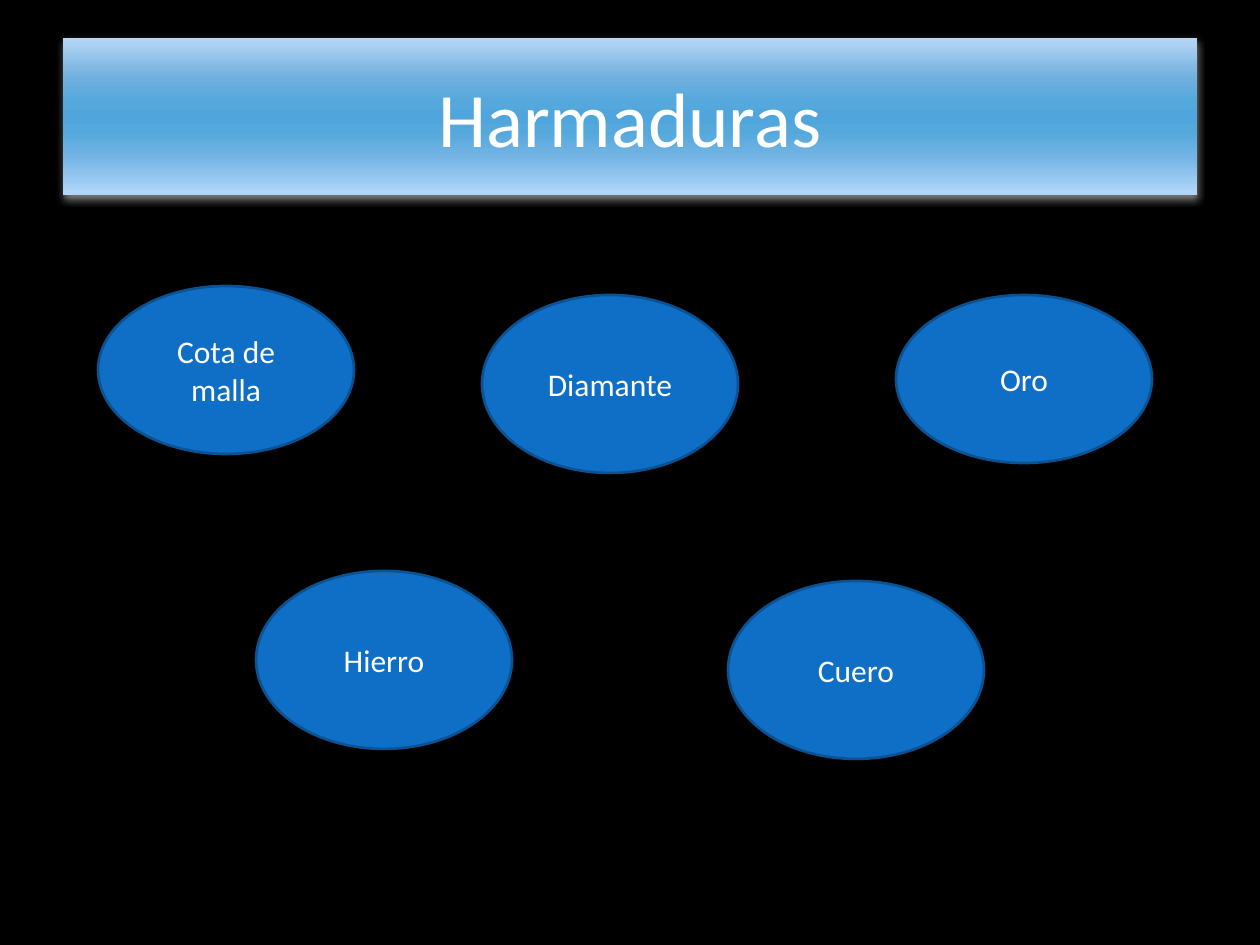
from lxml import etree
from pptx import Presentation
from pptx.dml.color import RGBColor
from pptx.enum.shapes import MSO_SHAPE
from pptx.enum.text import MSO_ANCHOR, PP_ALIGN
from pptx.oxml.ns import qn
from pptx.util import Pt

RECTANGLE = MSO_SHAPE.RECTANGLE
OVAL = MSO_SHAPE.OVAL
MIDDLE = MSO_ANCHOR.MIDDLE
CENTER = PP_ALIGN.CENTER
PX = 914400 // 126

THEME = {
    "font": "Calibri",
    "background": "000000",
    "text": "FFFFFF",
    "oval": "0F6FC6",
    "outline": "0B5292",
    "glow": "FFFFFF",
    "title_size": 44,
    "label_size": 18,
    "banner": [(0, "B7D7F6"), (25, "70B0DF"), (40, "55A8DC"), (50, "50A6DC"),
               (60, "55A8DC"), (75, "72B3E4"), (100, "B4D7F9")],
}


def add_labelled_shape(kind, left, top, width, height, label, size):
    box = page.shapes.add_shape(kind, left * PX, top * PX, width * PX, height * PX)
    box.shadow.inherit = False
    frame = box.text_frame
    frame.text = label
    frame.word_wrap = True
    frame.vertical_anchor = MIDDLE
    para = frame.paragraphs[0]
    para.alignment = CENTER
    font = para.runs[0].font
    font.name = THEME["font"]
    font.size = Pt(size)
    font.color.rgb = RGBColor.from_string(THEME["text"])
    return box


deck = Presentation()
deck.slide_width = 1260 * PX
deck.slide_height = 945 * PX
page = deck.slides.add_slide(deck.slide_layouts[6])
page.background.fill.solid()
page.background.fill.fore_color.rgb = RGBColor.from_string(THEME["background"])

banner = add_labelled_shape(RECTANGLE, 63, 38, 1134, 157, "Harmaduras", THEME["title_size"])
banner.line.fill.background()
banner.fill.gradient()
banner.fill.gradient_angle = 270
properties = banner._element.spPr
stops = properties.find(".//" + qn("a:gsLst"))
stops.clear()
for position, color in THEME["banner"]:
    stop = etree.SubElement(stops, qn("a:gs"), pos=str(position * 1000))
    etree.SubElement(stop, qn("a:srgbClr"), val=color)

effects = properties.find(qn("a:effectLst"))
shadow = etree.SubElement(effects, qn("a:outerShdw"), blurRad="57150", dist="25400",
                          dir="5400000", algn="ctr", rotWithShape="0")
glow = etree.SubElement(shadow, qn("a:srgbClr"), val=THEME["glow"])
etree.SubElement(glow, qn("a:alpha"), val="48000")

OVAL_WIDTH = 256
ovals = [
    ("Cota de malla", 98, 286, 168),
    ("Oro", 896, 295, 168),
    ("Diamante", 482, 295, 178),
    ("Cuero", 728, 581, 178),
    ("Hierro", 256, 571, 178),
]
for label, left, top, height in ovals:
    oval = add_labelled_shape(OVAL, left, top, OVAL_WIDTH, height, label, THEME["label_size"])
    oval.fill.solid()
    oval.fill.fore_color.rgb = RGBColor.from_string(THEME["oval"])
    oval.line.color.rgb = RGBColor.from_string(THEME["outline"])
    oval.line.width = Pt(1.5)

deck.save("out.pptx")
